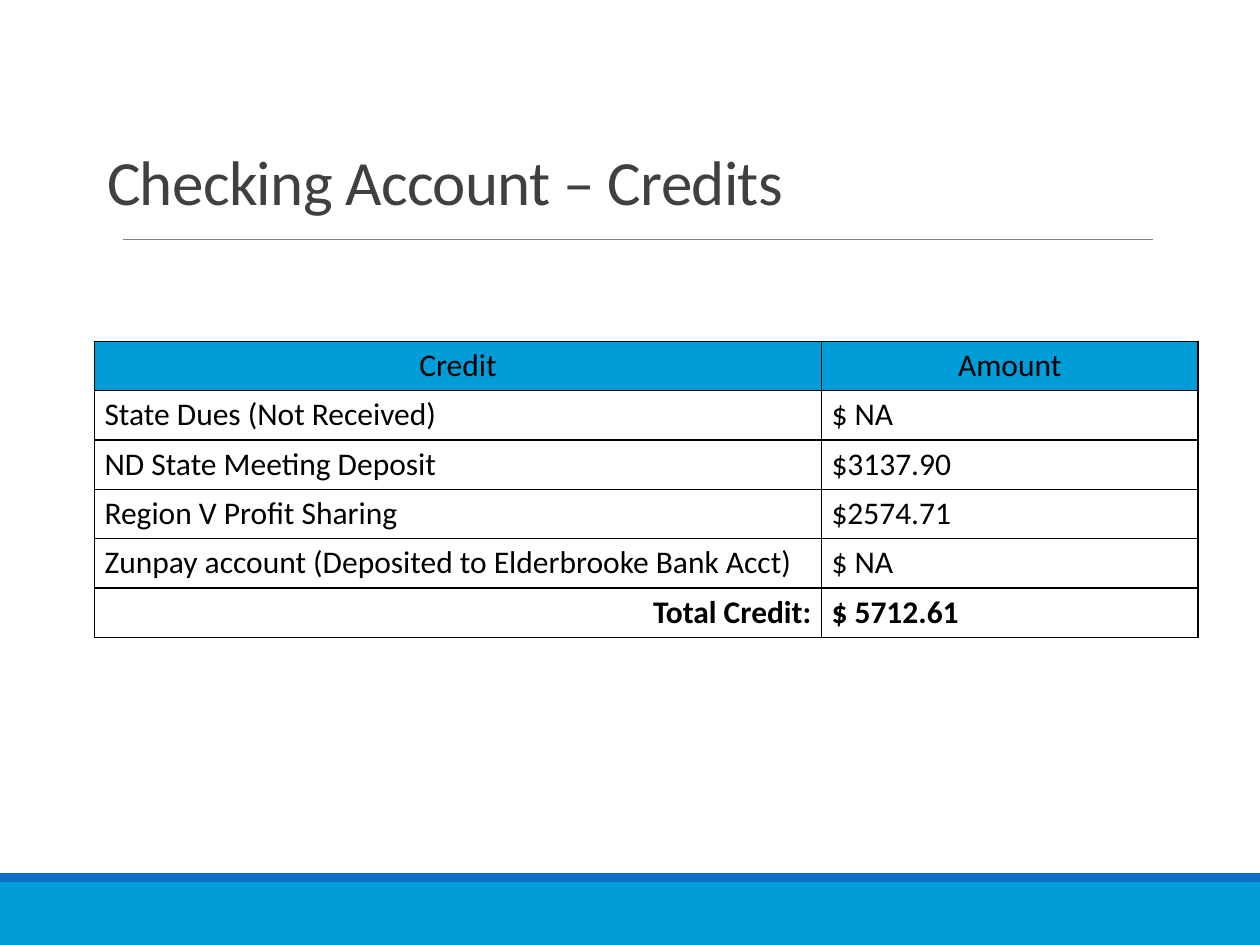
import pptx
import pptx.util
import pptx.dml.color
import pptx.enum.shapes
import pptx.enum.text
import pptx.oxml
import pptx.oxml.ns
import lxml.etree

WIDTH = pptx.util.Inches(10)
HEIGHT = pptx.util.Inches(7.5)
ALIGN = pptx.enum.text.PP_ALIGN
CREDITS = [
    ("Credit", "Amount"),
    ("State Dues (Not Received)", "$ NA"),
    ("ND State Meeting Deposit", "$3137.90"),
    ("Region V Profit Sharing", "$2574.71"),
    ("Zunpay account (Deposited to Elderbrooke Bank Acct)", "$ NA"),
    ("Total Credit:", "$ 5712.61"),
]


def color(hex_code):
    return pptx.dml.color.RGBColor.from_string(hex_code)


def across(percent):
    return round(WIDTH * percent / 100)


def down(inches):
    return round(HEIGHT * inches / 7.5)


def style_text(paragraph, size, hex_code, bold=False):
    for run in paragraph.runs:
        run.font.name = "Calibri"
        run.font.size = pptx.util.Pt(size)
        run.font.bold = bold
        run.font.color.rgb = color(hex_code)


def set_margins(holder, side, edge):
    holder.margin_left = holder.margin_right = pptx.util.Inches(side)
    holder.margin_top = holder.margin_bottom = pptx.util.Inches(edge)


def add_band(slide, top, height, hex_code):
    band = slide.shapes.add_shape(
        pptx.enum.shapes.MSO_SHAPE.RECTANGLE, 0, down(top), WIDTH, down(height))
    band.shadow.inherit = False
    band.fill.solid()
    band.fill.fore_color.rgb = color(hex_code)
    band.line.fill.background()


def add_rule(slide, left, right, top):
    rule = slide.shapes.add_connector(
        pptx.enum.shapes.MSO_CONNECTOR.STRAIGHT,
        across(left), down(top), across(right), down(top))
    rule.line.color.rgb = color("808080")
    rule.line.width = pptx.util.Pt(0.5)
    lxml.etree.SubElement(rule._element.spPr, pptx.oxml.ns.qn("a:effectLst"))


def add_title(slide, wording):
    title = slide.shapes.add_textbox(across(7.8), down(0.58), across(82.5), down(1.19))
    frame = title.text_frame
    frame.word_wrap = True
    frame.vertical_anchor = pptx.enum.text.MSO_ANCHOR.BOTTOM
    set_margins(frame, 0.07, 0.04)
    frame.text = wording
    heading = frame.paragraphs[0]
    heading.line_spacing = 0.85
    style_text(heading, 36, "404040")
    heading.runs[0]._r.get_or_add_rPr().set("spc", "-40")


def add_borders(cell):
    properties = cell._tc.get_or_add_tcPr()
    for side in ("lnL", "lnR", "lnT", "lnB"):
        properties.append(pptx.oxml.parse_xml(
            f'<a:{side} {pptx.oxml.ns.nsdecls("a")} w="12700"><a:solidFill>'
            f'<a:srgbClr val="000000"/></a:solidFill></a:{side}>'))


def fill_cell(cell, wording, alignment, header, bold):
    cell.text = wording
    set_margins(cell, 0.08, 0.04)
    entry = cell.text_frame.paragraphs[0]
    entry.alignment = alignment
    style_text(entry, 18, "000000", bold)
    add_borders(cell)
    if header:
        cell.fill.solid()
        cell.fill.fore_color.rgb = color("009DD9")
    else:
        cell.fill.background()


def add_credit_table(slide):
    last = len(CREDITS) - 1
    credits = slide.shapes.add_table(
        len(CREDITS), 2, across(7.5), down(2.71), across(87.6), down(2.35)).table
    credits.first_row = False
    credits.horz_banding = False
    for column, share in zip(credits.columns, (57.7, 29.9)):
        column.width = across(share)
    for r, entries in enumerate(CREDITS):
        for c, wording in enumerate(entries):
            alignment = ALIGN.LEFT
            if r == 0:
                alignment = ALIGN.CENTER
            elif r == last and c == 0:
                alignment = ALIGN.RIGHT
            fill_cell(credits.cell(r, c), wording, alignment, r == 0, r == last)


def main():
    deck = pptx.Presentation()
    deck.slide_width = WIDTH
    deck.slide_height = HEIGHT
    slide = deck.slides.add_slide(deck.slide_layouts[6])
    add_band(slide, 7, 0.5, "009DD9")
    add_band(slide, 6.93, 0.07, "0F6FC6")
    add_rule(slide, 9.8, 91.5, 1.9)
    add_title(slide, "Checking Account – Credits")
    add_credit_table(slide)
    deck.save("out.pptx")


if __name__ == "__main__":
    main()
